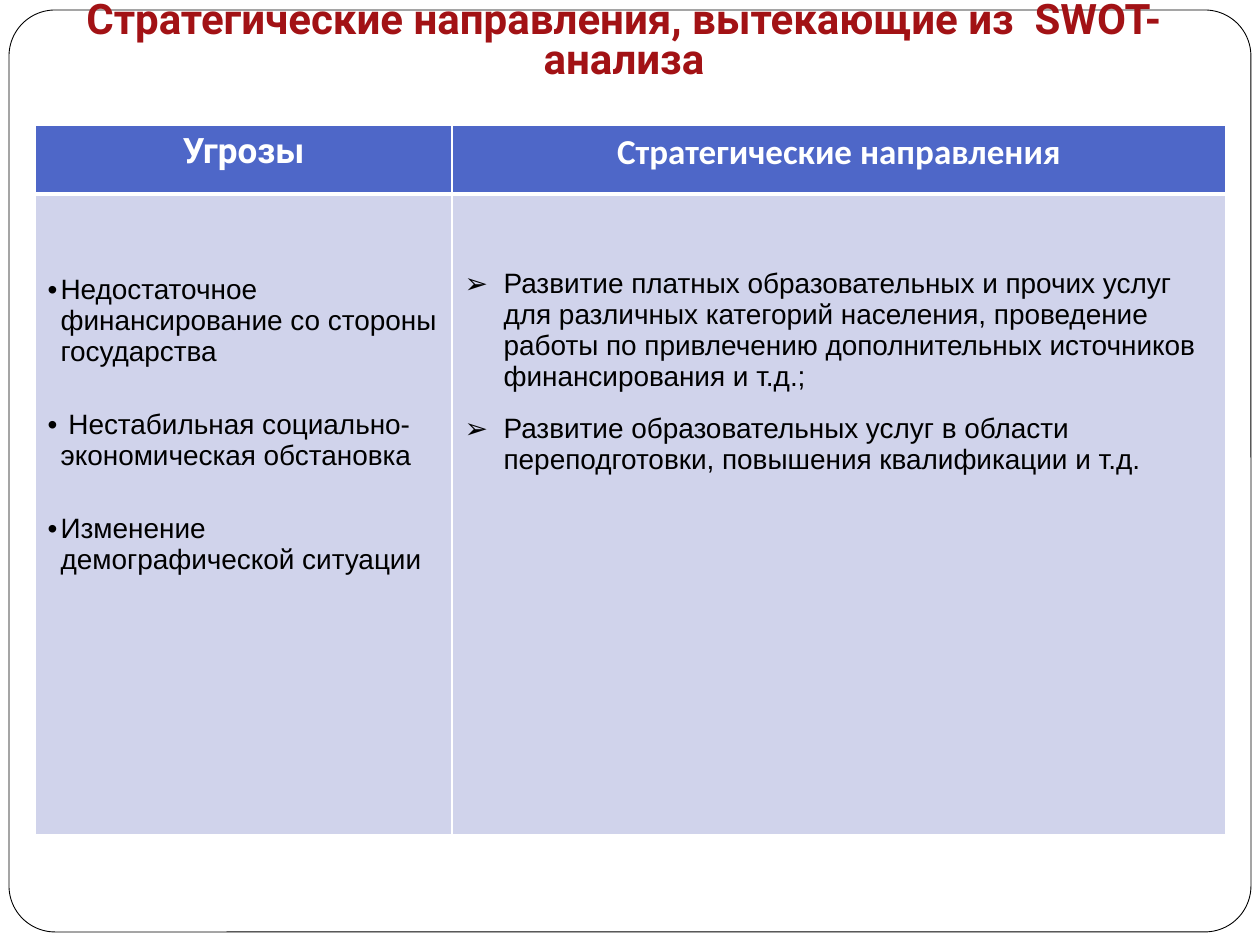
from dataclasses import dataclass

from lxml.etree import SubElement
from pptx import Presentation
from pptx.dml.color import RGBColor
from pptx.enum.shapes import MSO_SHAPE
from pptx.enum.text import MSO_ANCHOR, PP_ALIGN
from pptx.oxml.ns import qn
from pptx.util import Emu, Pt


@dataclass(frozen=True)
class Theme:
    white: str = "FFFFFF"
    black: str = "000000"
    title: str = "A21215"
    header: str = "4E67C8"
    body: str = "D0D3EB"
    title_size: int = 24
    header_size: int = 20
    body_size: int = 16


T = Theme()
EMU_PER_PX = 914400 / 126


def px(n):
    """Turn pixels (126 to the inch) into EMU."""
    return Emu(round(n * EMU_PER_PX))


def add_run(p, text, font, size, color, bold):
    r = p.add_run()
    r.text = text
    r.font.name = font
    r.font.size = Pt(size)
    r.font.bold = bold
    r.font.color.rgb = RGBColor.from_string(color)


prs = Presentation()
prs.slide_width, prs.slide_height = px(1260), px(945)
s = prs.slides.add_slide(prs.slide_layouts[6])

# Rounded frame
sp = s.shapes.add_shape(MSO_SHAPE.ROUNDED_RECTANGLE, px(9), px(10), px(1242), px(922))
sp.adjustments[0] = 0.05
sp.shadow.inherit = False
sp.fill.solid()
sp.fill.fore_color.rgb = RGBColor.from_string(T.white)
sp.line.color.rgb = RGBColor.from_string(T.black)
sp.line.width = Pt(0.5)

# Title
tf = s.shapes.add_textbox(px(35), px(20), px(1178), px(76)).text_frame
tf.word_wrap = True
tf.vertical_anchor = MSO_ANCHOR.BOTTOM
tf.margin_bottom = px(13)
p = tf.paragraphs[0]
p.alignment = PP_ALIGN.CENTER
p.line_spacing = 0.8
add_run(p, "Стратегические направления, вытекающие из  SWOT-анализа",
        "Roboto", T.title_size, T.title, True)

# Table: header, header font, bullet, indent px, space before pt, top margin px, items
columns = [
    ("Угрозы", "Roboto", "•", 13, 24, 80, [
        "Недостаточное финансирование со стороны государства",
        " Нестабильная социально-экономическая обстановка",
        "Изменение демографической ситуации",
    ]),
    ("Стратегические направления", "Calibri", "➢", 39, 12, 74, [
        "Развитие платных образовательных и прочих услуг для различных категорий "
        "населения, проведение работы по привлечению дополнительных источников "
        "финансирования и т.д.;",
        "Развитие образовательных услуг в области переподготовки, "
        "повышения квалификации и т.д.",
    ]),
]
tbl = s.shapes.add_table(2, 2, px(35), px(125), px(1191), px(710)).table
for col, width in zip(tbl.columns, (417, 774)):
    col.width = px(width)
for row, height in zip(tbl.rows, (69, 641)):
    row.height = px(height)

for c, (heading, font, bullet, indent, before, top, items) in enumerate(columns):
    p = tbl.cell(0, c).text_frame.paragraphs[0]
    p.alignment = PP_ALIGN.CENTER
    add_run(p, heading, font, T.header_size, T.white, True)

    cell = tbl.cell(1, c)
    cell.margin_top = px(top)
    tf = cell.text_frame
    for i, item in enumerate(items):
        p = tf.add_paragraph() if i else tf.paragraphs[0]
        if i:
            p.space_before = Pt(before)
        pPr = p._p.get_or_add_pPr()
        pPr.set("marL", str(px(indent)))
        pPr.set("indent", str(-px(indent)))
        SubElement(pPr, qn("a:buFont")).set("typeface", "Arial")
        SubElement(pPr, qn("a:buChar")).set("char", bullet)
        add_run(p, item, "Arial", T.body_size, T.black, False)

# White cell borders, thicker between header and body
for row, (fill, top, bottom) in enumerate([(T.header, 1, 3), (T.body, 3, 1)]):
    for c in range(2):
        cell = tbl.cell(row, c)
        tcPr = cell._tc.get_or_add_tcPr()
        for side, width in (("L", 1), ("R", 1), ("T", top), ("B", bottom)):
            ln = SubElement(tcPr, qn(f"a:ln{side}"))
            ln.set("w", str(Pt(width)))
            SubElement(SubElement(ln, qn("a:solidFill")), qn("a:srgbClr")).set("val", T.white)
        cell.fill.solid()
        cell.fill.fore_color.rgb = RGBColor.from_string(fill)

prs.save("out.pptx")
